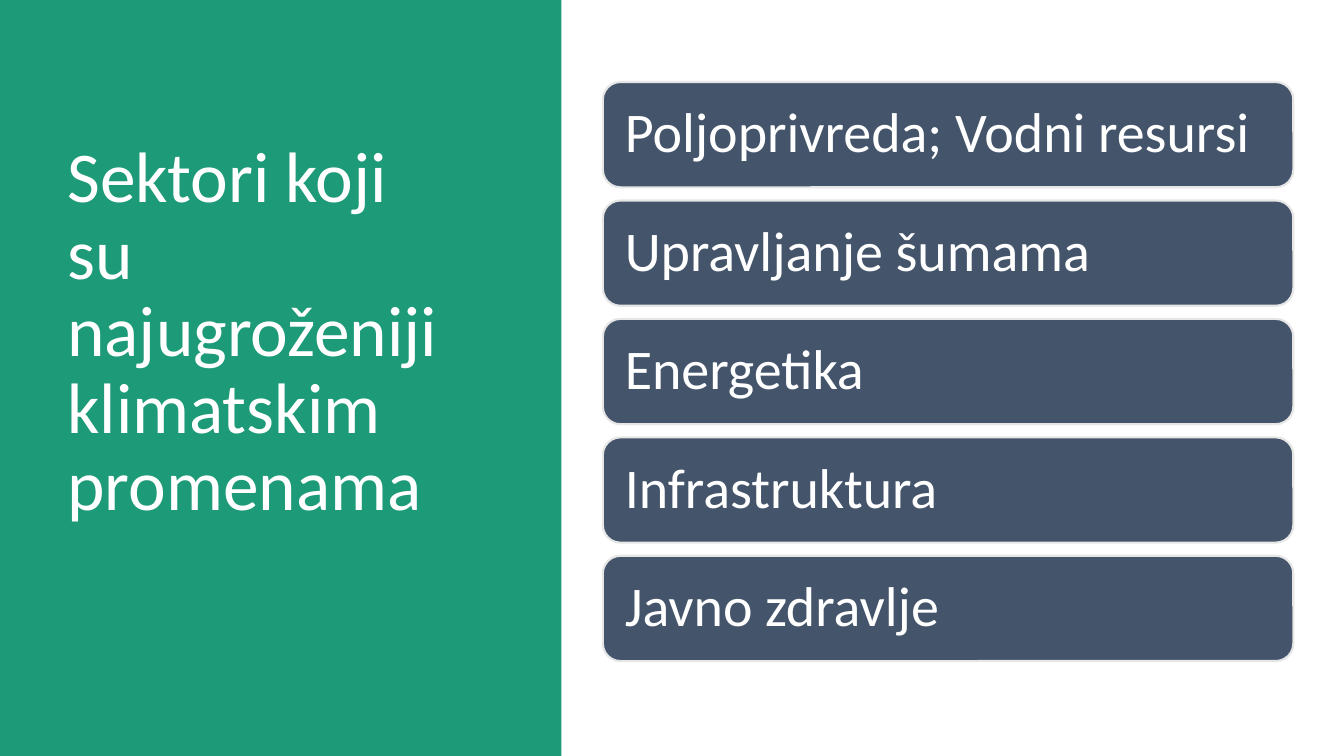
from dataclasses import dataclass

from pptx import Presentation
from pptx.dml.color import RGBColor
from pptx.enum.shapes import MSO_SHAPE as Shape
from pptx.enum.text import MSO_ANCHOR as Anchor, PP_ALIGN as Align
from pptx.util import Pt

TITLE = "Sektori koji su najugroženiji klimatskim promenama"
SECTORS = [
    "Poljoprivreda; Vodni resursi",
    "Upravljanje šumama",
    "Energetika",
    "Infrastruktura",
    "Javno zdravlje",
]


@dataclass(frozen=True)
class Theme:
    font: str = "Calibri"
    title_size: float = 51
    sector_size: float = 40
    panel: RGBColor = RGBColor(0x1D, 0x9A, 0x78)
    bar: RGBColor = RGBColor(0x44, 0x54, 0x6A)
    outline: RGBColor = RGBColor(0xE7, 0xE6, 0xE6)
    text: RGBColor = RGBColor(0xFF, 0xFF, 0xFF)


THEME = Theme()
PAGE_WIDTH, PAGE_HEIGHT = 960, 540
PANEL_WIDTH = 401
TITLE_BOX = (41, 49, 299.5, 378)
BAR_LEFT, BAR_TOP, BAR_WIDTH, BAR_HEIGHT = 430.6, 58.6, 493.2, 75.2
BAR_GAP = 9.4


def add_block(page, kind, bounds, fill):
    block = page.shapes.add_shape(kind, *map(Pt, bounds))
    block.shadow.inherit = False
    block.fill.solid()
    block.fill.fore_color.rgb = fill
    block.line.fill.background()
    return block


def write(box, text, size, left_inset, right_inset):
    """Set one left-aligned, vertically centred paragraph in the box."""
    frame = box.text_frame
    frame.word_wrap = True
    frame.vertical_anchor = Anchor.MIDDLE
    frame.margin_left, frame.margin_right = Pt(left_inset), Pt(right_inset)
    para = frame.paragraphs[0]
    para.alignment = Align.LEFT
    para.line_spacing = 0.9
    span = para.add_run()
    span.text = text
    span.font.name = THEME.font
    span.font.size = Pt(size)
    span.font.color.rgb = THEME.text


def main():
    deck = Presentation()
    deck.slide_width, deck.slide_height = Pt(PAGE_WIDTH), Pt(PAGE_HEIGHT)
    page = deck.slides.add_slide(deck.slide_layouts[6])

    add_block(page, Shape.RECTANGLE, (0, 0, PANEL_WIDTH, PAGE_HEIGHT), THEME.panel)
    title = page.shapes.add_textbox(*map(Pt, TITLE_BOX))
    write(title, TITLE, THEME.title_size, 7.2, 12)

    for row, sector in enumerate(SECTORS):
        top = BAR_TOP + row * (BAR_HEIGHT + BAR_GAP)
        bounds = (BAR_LEFT, top, BAR_WIDTH, BAR_HEIGHT)
        bar = add_block(page, Shape.ROUNDED_RECTANGLE, bounds, THEME.bar)
        bar.line.color.rgb = THEME.outline
        bar.line.width = Pt(1.5)
        write(bar, sector, THEME.sector_size, 12, 12)

    deck.save("out.pptx")


if __name__ == "__main__":
    main()
